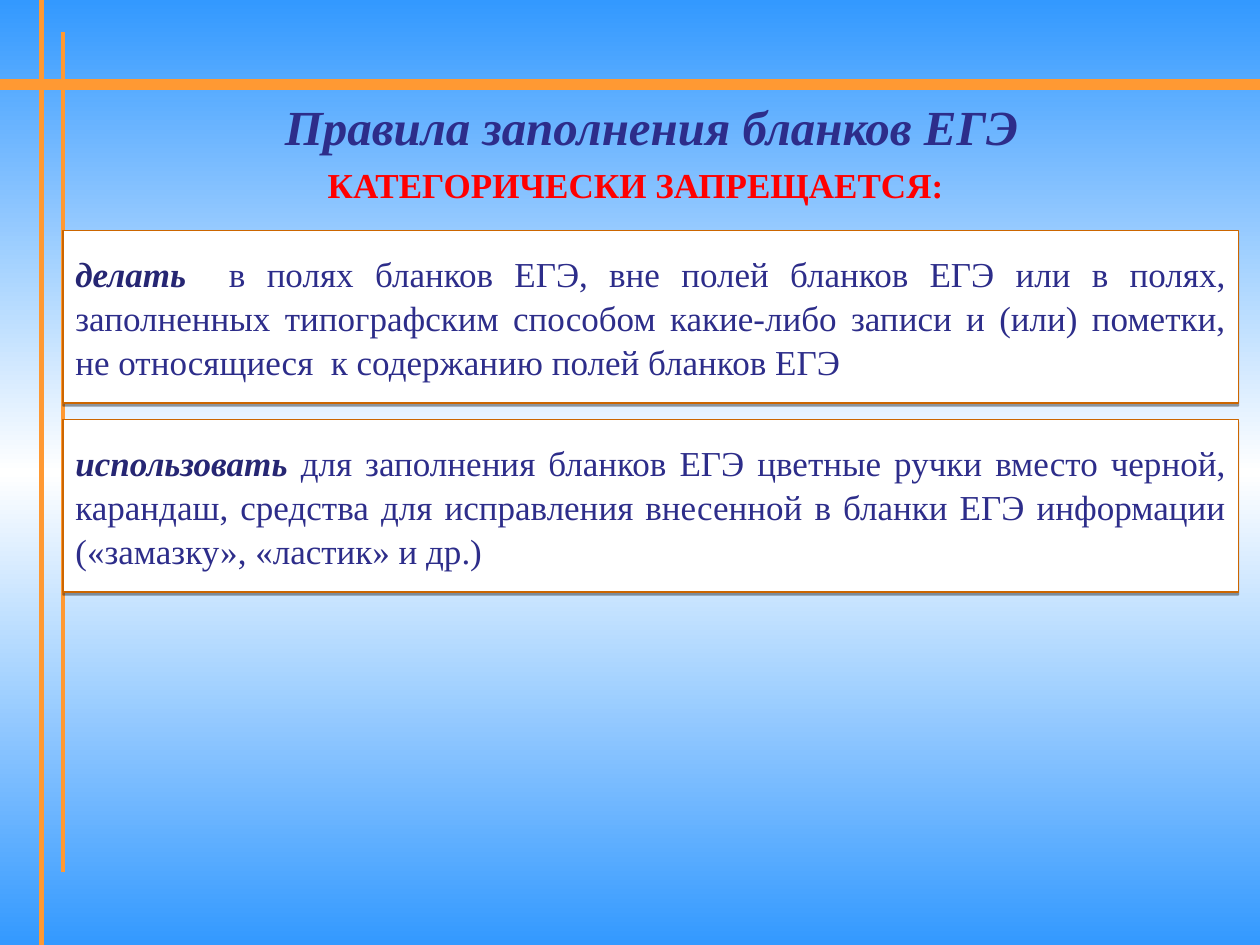
from copy import deepcopy
from dataclasses import dataclass

from lxml.etree import SubElement
from pptx import Presentation
from pptx.dml.color import RGBColor as Color
from pptx.enum.shapes import MSO_CONNECTOR as Connector, MSO_SHAPE as Preset
from pptx.enum.text import MSO_ANCHOR as Anchor, PP_ALIGN as Align
from pptx.oxml.ns import qn
from pptx.util import Inches, Pt

WIDTH, HEIGHT = 10, 7.5
BOX_LEFT, BOX_WIDTH, BOX_HEIGHT = 0.5, 9.33, 1.37
FIRST_BOX_TOP, BOX_STEP = 1.83, 1.5
TITLE = "Правила заполнения бланков ЕГЭ"
SUBTITLE = "КАТЕГОРИЧЕСКИ ЗАПРЕЩАЕТСЯ: "
RULES = [
    ("делать  ", "в полях бланков ЕГЭ, вне полей бланков ЕГЭ или в полях, "
     "заполненных типографским способом какие-либо записи и (или) пометки, "
     "не относящиеся  к содержанию полей бланков ЕГЭ"),
    ("использовать ", "для заполнения бланков ЕГЭ цветные ручки вместо черной, "
     "карандаш, средства для исправления внесенной в бланки ЕГЭ информации "
     "(«замазку», «ластик» и др.)"),
]
GRID_LINES = [
    ((0, 0.67), (WIDTH, 0.67), 6),
    ((0.33, 0), (0.33, HEIGHT), 3),
    ((0.5, 0.25), (0.5, 6.92), 2.25),
]


@dataclass(frozen=True)
class Theme:
    """Colours, font and type sizes of the slide."""

    font: str = "Times New Roman"
    title_size: int = 28
    body_size: int = 20
    sky: str = "3399FF"
    white: str = "FFFFFF"
    grid: str = "FF9933"
    border: str = "CC6600"
    text: str = "2D2D8A"
    keyword: str = "262673"
    warning: str = "FF0000"


THEME = Theme()


def rgb(value):
    """Turn a hex string into a colour."""
    return Color.from_string(value)


def add_text(paragraph, text, size=THEME.body_size, color=THEME.text, bold=False, italic=False):
    """Append one formatted run to a paragraph."""
    run = paragraph.add_run()
    run.text = text
    font = run.font
    font.name, font.size, font.bold, font.italic = THEME.font, Pt(size), bold, italic
    font.color.rgb = rgb(color)


def paint_background(slide):
    """Fill the background with a vertical three-stop gradient."""
    fill = slide.background.fill
    fill.gradient()
    fill.gradient_angle = 270
    stop_list = next(slide.element.iter(qn("a:gsLst")))
    stop_list.append(deepcopy(stop_list[0]))
    stops = zip(fill.gradient_stops, (0, 0.5, 1), (THEME.sky, THEME.white, THEME.sky))
    for stop, position, color in stops:
        stop.position = position
        stop.color.rgb = rgb(color)


def add_grid_line(slide, start, end, width):
    """Draw one flat decorative line."""
    line = slide.shapes.add_connector(Connector.STRAIGHT, *map(Inches, start + end))
    line.line.color.rgb = rgb(THEME.grid)
    line.line.width = Pt(width)
    SubElement(line.element.spPr, qn("a:effectLst"))


def set_title(slide):
    """Place and format the title placeholder."""
    title = slide.shapes.title
    title.left, title.top, title.width, title.height = map(Inches, (0.5, 0.75, 9.34, 0.5))
    title.text_frame.vertical_anchor = Anchor.MIDDLE
    paragraph = title.text_frame.paragraphs[0]
    paragraph.alignment = Align.CENTER
    add_text(paragraph, TITLE, size=THEME.title_size, bold=True, italic=True)


def add_subtitle(slide):
    """Add the warning line below the title."""
    frame = slide.shapes.add_textbox(*map(Inches, (0.58, 1.25, 9, 0.5))).text_frame
    frame.word_wrap = True
    paragraph = frame.paragraphs[0]
    paragraph.alignment = Align.CENTER
    add_text(paragraph, SUBTITLE, color=THEME.warning, bold=True)


def add_shadow(shape):
    """Give a shape a sharp translucent shadow straight below it."""
    shape.shadow.inherit = False
    effects = shape.element.spPr.find(qn("a:effectLst"))
    shadow = SubElement(effects, qn("a:outerShdw"), blurRad="0", dist=str(Pt(1.6)),
                        dir="5400000", rotWithShape="0")
    color = SubElement(shadow, qn("a:srgbClr"), val="000000")
    SubElement(color, qn("a:alpha"), val="38000")


def add_rule_box(slide, top, keyword, text):
    """Add a bordered box with one rule led by its keyword."""
    place = map(Inches, (BOX_LEFT, top, BOX_WIDTH, BOX_HEIGHT))
    shape = slide.shapes.add_shape(Preset.RECTANGLE, *place)
    shape.fill.solid()
    shape.fill.fore_color.rgb = rgb(THEME.white)
    shape.line.color.rgb = rgb(THEME.border)
    shape.line.width = Pt(0.75)
    add_shadow(shape)
    frame = shape.text_frame
    frame.word_wrap = True
    frame.vertical_anchor = Anchor.TOP
    frame.margin_top, frame.margin_bottom = Inches(0.16), Inches(0.2)
    paragraph = frame.paragraphs[0]
    paragraph.alignment = Align.JUSTIFY
    paragraph.line_spacing = 1.05
    add_text(paragraph, keyword, color=THEME.keyword, bold=True, italic=True)
    add_text(paragraph, text)


def main():
    """Build and save the slide."""
    presentation = Presentation()
    presentation.slide_width, presentation.slide_height = Inches(WIDTH), Inches(HEIGHT)
    slide = presentation.slides.add_slide(presentation.slide_layouts[5])
    paint_background(slide)
    for start, end, width in GRID_LINES:
        add_grid_line(slide, start, end, width)
    set_title(slide)
    add_subtitle(slide)
    for row, (keyword, text) in enumerate(RULES):
        add_rule_box(slide, FIRST_BOX_TOP + row * BOX_STEP, keyword, text)
    presentation.save("out.pptx")


if __name__ == "__main__":
    main()
